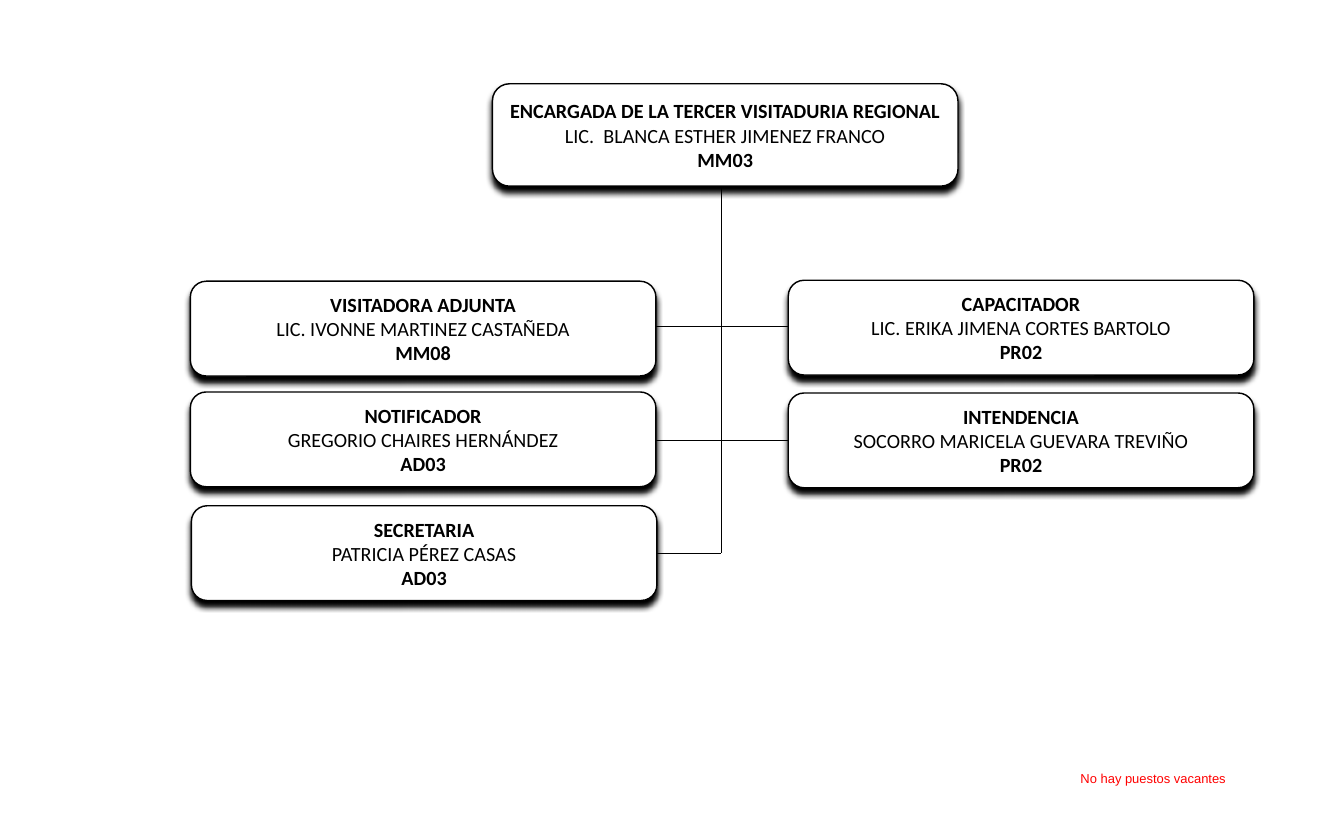
from lxml import etree
from pptx import Presentation
from pptx.dml.color import RGBColor
from pptx.enum.shapes import MSO_CONNECTOR, MSO_SHAPE
from pptx.enum.text import MSO_ANCHOR, MSO_AUTO_SIZE, PP_ALIGN
from pptx.oxml.ns import qn
from pptx.util import Pt

ROUNDED = MSO_SHAPE.ROUNDED_RECTANGLE
STRAIGHT = MSO_CONNECTOR.STRAIGHT
MIDDLE = MSO_ANCHOR.MIDDLE
CENTER = PP_ALIGN.CENTER
GROW = MSO_AUTO_SIZE.SHAPE_TO_FIT_TEXT

BLACK = RGBColor(0x00, 0x00, 0x00)
WHITE = RGBColor(0xFF, 0xFF, 0xFF)
RED = RGBColor(0xFF, 0x00, 0x00)

BOX_WIDTH = 324
BOX_HEIGHT = 66
TRUNK_X = 501.84
LEFT_X = 132.5
RIGHT_X = 548.6
ROW_CENTERS = (227.5, 306.7, 385.2)

HEAD = ("ENCARGADA DE LA TERCER VISITADURIA REGIONAL", "LIC.  BLANCA ESTHER JIMENEZ FRANCO", "MM03")
# Left, top, then post, holder and level
STAFF = (
    (LEFT_X, 195.8, ("VISITADORA ADJUNTA", "LIC. IVONNE MARTINEZ CASTAÑEDA", "MM08")),
    (LEFT_X, 272.9, ("NOTIFICADOR", "GREGORIO CHAIRES HERNÁNDEZ", "AD03")),
    (LEFT_X + 0.7, 352.1, ("SECRETARIA", "PATRICIA PÉREZ CASAS", "AD03")),
    (RIGHT_X, 195.1, ("CAPACITADOR", "LIC. ERIKA JIMENA CORTES BARTOLO", "PR02")),
    (RIGHT_X, 273.6, ("INTENDENCIA", "SOCORRO MARICELA GUEVARA TREVIÑO", "PR02")),
)


class OrgChart:
    def __init__(self, slide):
        self.slide = slide
        self.box_font = "Calibri"
        self.note_font = "Arial"

    def line(self, x1, y1, x2, y2):
        connector = self.slide.shapes.add_connector(STRAIGHT, Pt(x1), Pt(y1), Pt(x2), Pt(y2))
        connector.line.color.rgb = BLACK
        connector.line.width = Pt(0.75)
        etree.SubElement(connector._element.spPr, qn("a:effectLst"))

    def drop_shadow(self, shape):
        shape.shadow.inherit = False
        effects = shape._element.spPr.find(qn("a:effectLst"))
        shadow = etree.SubElement(
            effects, qn("a:outerShdw"), blurRad=str(Pt(4)), dist=str(Pt(4)),
            dir="5400000", algn="ctr", rotWithShape="0")
        etree.SubElement(shadow, qn("a:srgbClr"), val=str(BLACK))

    def set_text(self, paragraph, text, font, size, color, bold=False):
        paragraph.text = text
        paragraph.alignment = CENTER
        paragraph.font.name = font
        paragraph.font.size = Pt(size)
        paragraph.font.color.rgb = color
        paragraph.font.bold = bold

    def box(self, left, top, lines, height=BOX_HEIGHT):
        shape = self.slide.shapes.add_shape(ROUNDED, Pt(left), Pt(top), Pt(BOX_WIDTH), Pt(height))
        shape.fill.solid()
        shape.fill.fore_color.rgb = WHITE
        shape.line.color.rgb = BLACK
        shape.line.width = Pt(1)
        self.drop_shadow(shape)
        frame = shape.text_frame
        frame.word_wrap = False
        frame.vertical_anchor = MIDDLE
        frame.margin_left = frame.margin_right = Pt(12.24)
        frame.margin_top = frame.margin_bottom = Pt(6.5)
        for index, text in enumerate(lines):
            paragraph = frame.add_paragraph() if index else frame.paragraphs[0]
            self.set_text(paragraph, text, self.box_font, 14, BLACK, bold=index != 1)

    def note(self, left, top, width, height, text):
        frame = self.slide.shapes.add_textbox(Pt(left), Pt(top), Pt(width), Pt(height)).text_frame
        frame.word_wrap = True
        frame.auto_size = GROW
        self.set_text(frame.paragraphs[0], text, self.note_font, 9, RED)


def main():
    presentation = Presentation()
    presentation.slide_width = Pt(935.28)
    presentation.slide_height = Pt(567.36)
    chart = OrgChart(presentation.slides.add_slide(presentation.slide_layouts[6]))

    first, second, last = ROW_CENTERS
    chart.line(TRUNK_X, 126, TRUNK_X, last)
    for center in (first, second):
        chart.line(422.6, center, 581, center)
    chart.line(416.9, last, TRUNK_X, last)

    chart.box(342.7, 58.3, HEAD, height=71.3)
    for left, top, lines in STAFF:
        chart.box(left, top, lines)
    chart.note(683.3, 532.8, 238.3, 18, "No hay puestos vacantes")

    presentation.save("out.pptx")


if __name__ == "__main__":
    main()
